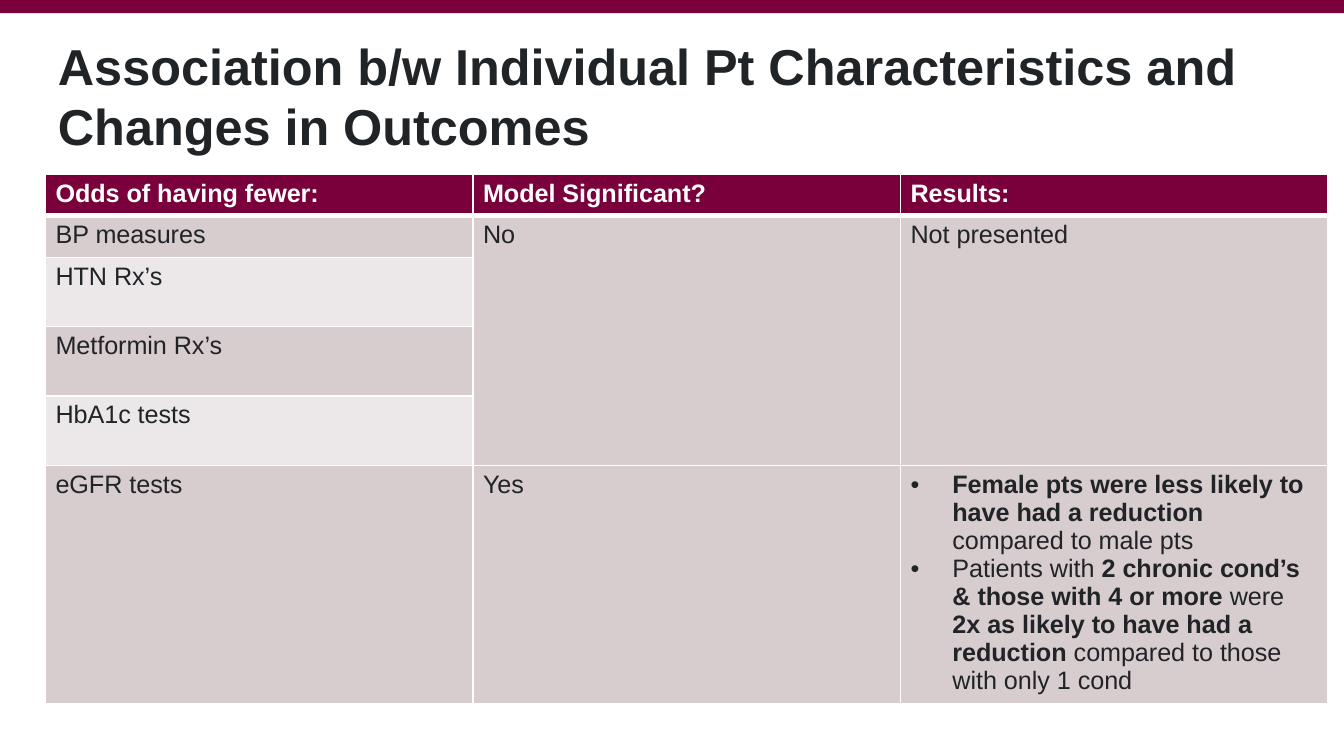
from lxml.etree import SubElement
from pptx import Presentation
from pptx.dml.color import RGBColor
from pptx.enum.shapes import MSO_SHAPE as Shape
from pptx.enum.text import MSO_ANCHOR as Anchor, MSO_AUTO_SIZE as Fit, PP_ALIGN as Align
from pptx.oxml.ns import qn
from pptx.util import Cm, Pt

WINE, INK, WHITE = "7A003C", "212427", "FFFFFF"
BANDS = ["D7CCCE", "ECE7E8"]
TITLE = "Association b/w Individual Pt Characteristics and Changes in Outcomes"
HEADS = ["Odds of having fewer:", "Model Significant?", "Results:"]
ROWS = [
    ["BP measures", "No", "Not presented"],
    ["HTN Rx’s"],
    ["Metformin Rx’s"],
    ["HbA1c tests"],
    ["eGFR tests", "Yes"],
]
POINTS = [
    [("Female pts were less likely to have had a reduction ", True),
     ("compared to male pts", False)],
    [("Patients with ", False),
     ("2 chronic cond’s & those with 4 or more ", True),
     ("were ", False),
     ("2x as likely to have had a reduction ", True),
     ("compared to those with only 1 cond", False)],
]
HEIGHTS = [0.77, 0.79, 1.31, 1.31, 1.31, 4.5]
LEFT, TOP, COL = 0.86, 3.3, 8.08


def paint(fill, tone):
    fill.solid()
    fill.fore_color.rgb = RGBColor.from_string(tone)


def write(par, text, size, tone, bold):
    run = par.add_run()
    run.text = text
    font = run.font
    font.name, font.size, font.bold = "Arial", Pt(size), bold
    font.color.rgb = RGBColor.from_string(tone)


def bullet(par):
    props = par._p.get_or_add_pPr()
    props.set("marL", str(Cm(0.79)))
    props.set("indent", str(-Cm(0.79)))
    SubElement(props, qn("a:buFont"), typeface="Arial")
    SubElement(props, qn("a:buChar"), char="•")


def edge(cell, foot):
    props = cell._tc.get_or_add_tcPr()
    for place, side in enumerate("LRTB"):
        width = foot if side == "B" else 1
        line = SubElement(props, qn("a:ln" + side), w=str(Pt(width)))
        fill = SubElement(line, qn("a:solidFill"))
        SubElement(fill, qn("a:srgbClr"), val=WHITE)
        props.insert(place, line)


deck = Presentation()
deck.slide_width, deck.slide_height = Cm(25.4), Cm(14.28)
slide = deck.slides.add_slide(deck.slide_layouts[5])

bar = slide.shapes.add_shape(Shape.RECTANGLE, 0, 0, deck.slide_width, Cm(0.25))
bar.shadow.inherit = False
paint(bar.fill, WINE)
bar.line.fill.background()

title = slide.shapes.title
title.left, title.top, title.width, title.height = map(Cm, (0.84, 0.38, 23.57, 2.84))
frame = title.text_frame
frame.word_wrap, frame.auto_size = True, Fit.NONE
frame.vertical_anchor = Anchor.MIDDLE
frame.paragraphs[0].alignment = Align.LEFT
write(frame.paragraphs[0], TITLE, 27, INK, True)

grid = slide.shapes.add_table(len(HEIGHTS), len(HEADS), Cm(LEFT), Cm(TOP),
                              Cm(COL * len(HEADS)), Cm(sum(HEIGHTS))).table
for col in grid.columns:
    col.width = Cm(COL)
for row, high in zip(grid.rows, HEIGHTS):
    row.height = Cm(high)
for c in (1, 2):
    grid.cell(1, c).merge(grid.cell(4, c))

for r, texts in enumerate([HEADS] + ROWS):
    head = r == 0
    for c in range(len(HEADS)):
        cell = grid.cell(r, c)
        cell.margin_left = cell.margin_right = Cm(0.19)
        cell.margin_top = cell.margin_bottom = Cm(0.1)
        band = BANDS[(r - 1) % 2] if c == 0 else BANDS[0]
        paint(cell.fill, WINE if head else band)
        edge(cell, 3 if head else 1)
        if c < len(texts):
            write(cell.text_frame.paragraphs[0], texts[c], 13.5,
                  WHITE if head else INK, head)

notes = grid.cell(5, 2).text_frame
for i, point in enumerate(POINTS):
    par = notes.add_paragraph() if i else notes.paragraphs[0]
    bullet(par)
    for text, bold in point:
        write(par, text, 13.5, INK, bold)

deck.save("out.pptx")
